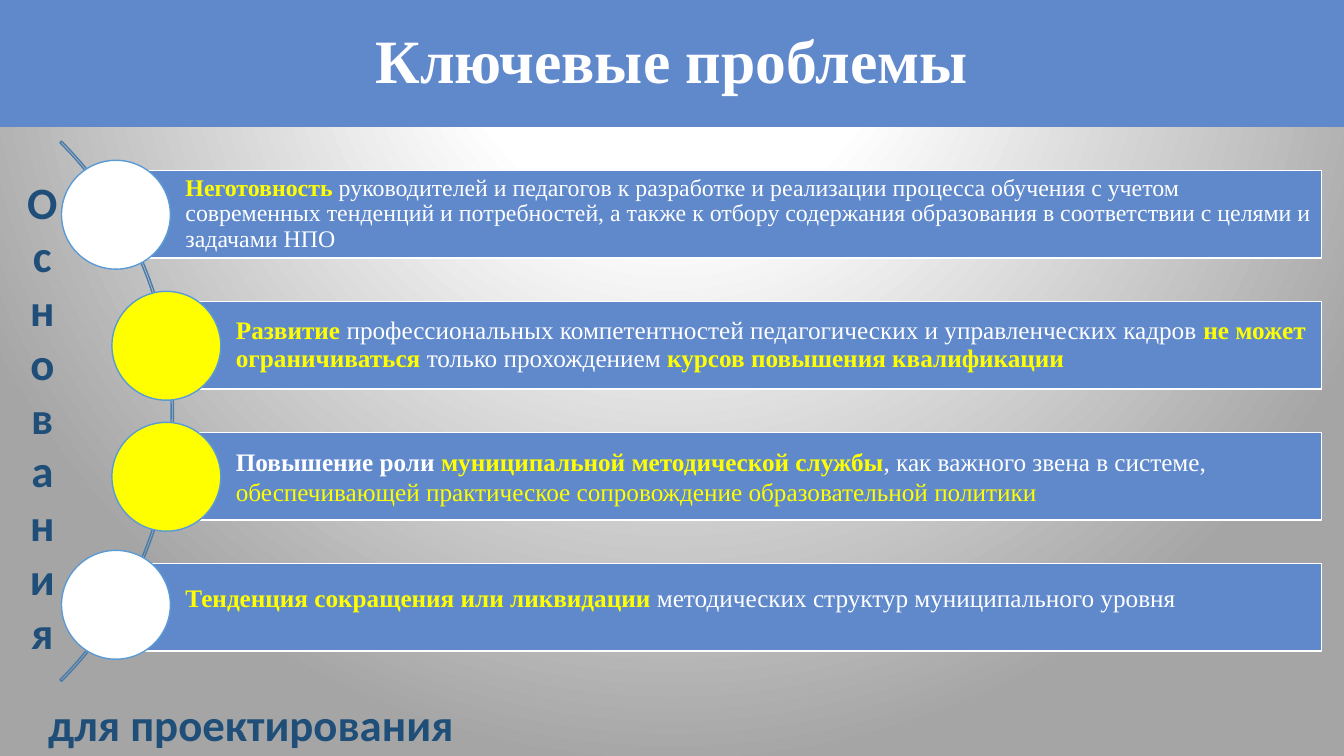
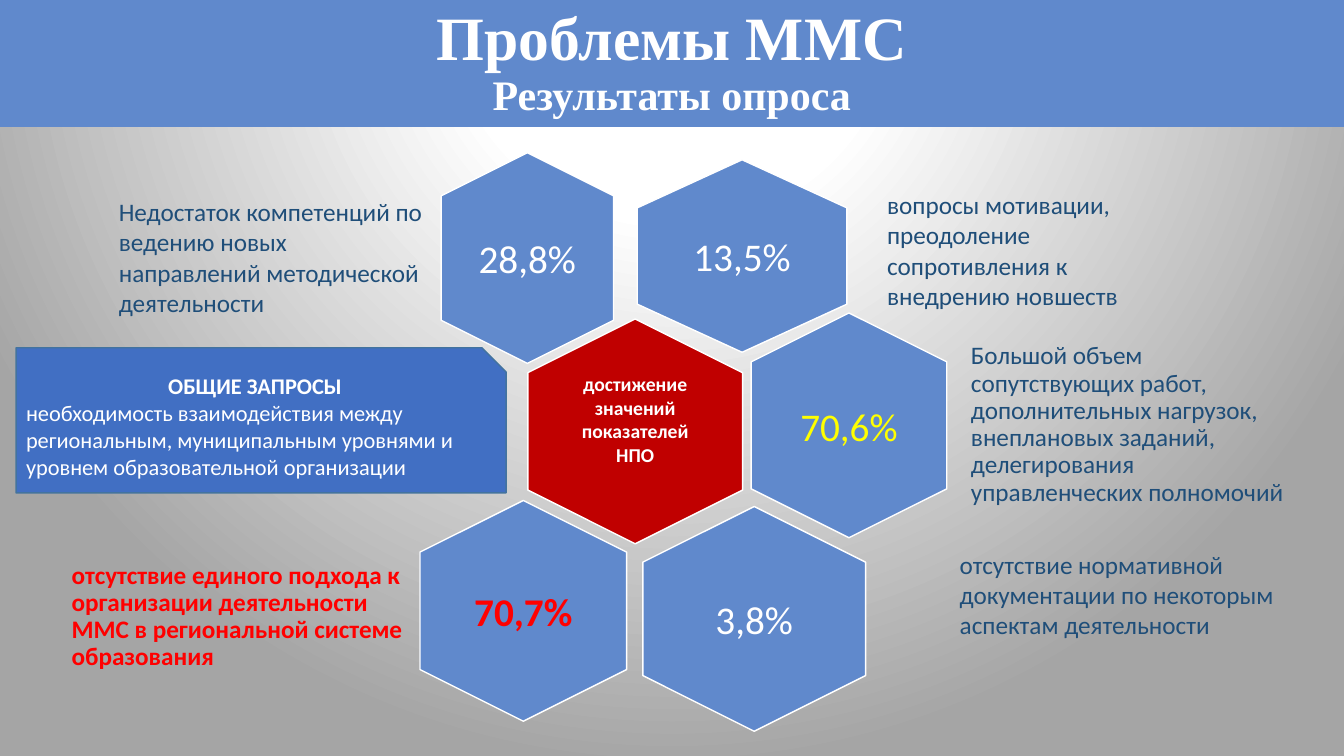
from dataclasses import dataclass
from typing import NamedTuple

from lxml import etree
from pptx import Presentation
from pptx.dml.color import RGBColor
from pptx.enum.shapes import MSO_SHAPE
from pptx.enum.text import MSO_ANCHOR, PP_ALIGN
from pptx.oxml.ns import qn
from pptx.util import Inches, Pt

RECTANGLE, OVAL = MSO_SHAPE.RECTANGLE, MSO_SHAPE.OVAL
HEXAGON, SNIPPED = MSO_SHAPE.HEXAGON, MSO_SHAPE.SNIP_1_RECTANGLE
BLOCK_ARC = MSO_SHAPE.BLOCK_ARC
LEFT, CENTER = PP_ALIGN.LEFT, PP_ALIGN.CENTER
TOP, MIDDLE = MSO_ANCHOR.TOP, MSO_ANCHOR.MIDDLE


@dataclass(frozen=True)
class Theme:
    blue: str = "6089CC"
    deep_blue: str = "416FC3"
    snip_line: str = "43739E"
    arc_line: str = "497CAB"
    circle_line: str = "5B9BD5"
    navy: str = "1F4E79"
    white: str = "FFFFFF"
    yellow: str = "FFFF00"
    red: str = "FF0000"
    dark_red: str = "C00000"
    background: tuple = ((0, "FFFFFF"), (28, "FFFFFF"), (100, "A5A5A5"))
    serif: str = "Times New Roman"
    sans: str = "Calibri"
    title: int = 44
    subtitle: int = 30
    caption: int = 32
    percent: int = 28
    body: int = 18
    small: int = 16
    tight: float = 0.9


THEME = Theme()


class Box(NamedTuple):
    left: float
    top: float
    width: float
    height: float

    def inches(self):
        return [Inches(value) for value in self]


def centered_box(x, y, width, height):
    return Box(x - width / 2, y - height / 2, width, height)


def run(text, **changes):
    """A span of text with its own size, color or bold."""
    return text, changes


def write(shape, paragraphs, font=THEME.sans, size=THEME.body, color=THEME.navy,
          bold=False, align=LEFT, anchor=TOP, spacing=1.0,
          insets=(0.1, 0.05, 0.1, 0.05)):
    """Fill a shape with paragraphs; each is a list of runs."""
    frame = shape.text_frame
    frame.word_wrap = True
    frame.vertical_anchor = anchor
    (frame.margin_left, frame.margin_top,
     frame.margin_right, frame.margin_bottom) = [Inches(value) for value in insets]
    for index, runs in enumerate(paragraphs):
        para = frame.paragraphs[0] if index == 0 else frame.add_paragraph()
        para.alignment = align[index] if isinstance(align, tuple) else align
        para.line_spacing = spacing
        for text, changes in runs:
            span = para.add_run()
            span.text = text
            span.font.name = font
            span.font.size = Pt(changes.get("size", size))
            span.font.bold = changes.get("bold", bold)
            span.font.color.rgb = RGBColor.from_string(changes.get("color", color))


def add_text(page, box, text, **text_format):
    text_box = page.shapes.add_textbox(*box.inches())
    write(text_box, [[run(text)]], **text_format)
    return text_box


def add_shape(page, kind, box, fill=None, line=None):
    shape = page.shapes.add_shape(kind, *box.inches())
    shape.shadow.inherit = False
    if fill:
        shape.fill.solid()
        shape.fill.fore_color.rgb = RGBColor.from_string(fill)
    else:
        shape.fill.background()
    if line:
        shape.line.color.rgb = RGBColor.from_string(line)
        shape.line.width = Pt(1)
    else:
        shape.line.fill.background()
    return shape


def paint_background(page):
    """Radial gradient with its center above the slide."""
    page.background.fill.gradient()
    gradient = page.element.find(".//" + qn("a:gradFill"))
    for child in list(gradient):
        gradient.remove(child)
    stops = etree.SubElement(gradient, qn("a:gsLst"))
    for position, color in THEME.background:
        stop = etree.SubElement(stops, qn("a:gs"), pos=str(position * 1000))
        etree.SubElement(stop, qn("a:srgbClr"), val=color)
    circle = etree.SubElement(gradient, qn("a:path"), {"path": "circle"})
    etree.SubElement(circle, qn("a:fillToRect"),
                     l="50000", t="-80000", r="50000", b="180000")


def add_page(deck, title, subtitle=None):
    """A blank page with the shared background and title band."""
    page = deck.slides.add_slide(deck.slide_layouts[6])
    paint_background(page)
    band = add_shape(page, RECTANGLE, Box(0, 0, 13.33, 1.26), THEME.blue)
    lines = [[run(title)]]
    if subtitle:
        lines.append([run(subtitle, size=THEME.subtitle)])
    write(band, lines, font=THEME.serif, size=THEME.title, color=THEME.white,
          bold=True, align=CENTER, anchor=MIDDLE, spacing=THEME.tight)
    return page


# Slide 1: problem list along an arc

def key(text):
    return run(text, color=THEME.yellow, bold=True)


PROBLEMS = [
    dict(left=1.15, dot=THEME.white, size=17, spacing=THEME.tight, runs=[
        key("Неготовность "),
        run("руководителей и педагогов к разработке и реализации процесса обучения "
            "с учетом современных тенденций и потребностей, а также к отбору "
            "содержания образования в соответствии с целями и задачами НПО")]),
    dict(left=1.65, dot=THEME.yellow, spacing=THEME.tight, runs=[
        key("Развитие "),
        run("профессиональных компетентностей педагогических и управленческих кадров "),
        key("не может ограничиваться "),
        run("только прохождением "),
        key("курсов повышения квалификации")]),
    dict(left=1.65, dot=THEME.yellow, runs=[
        run("Повышение роли ", bold=True),
        key("муниципальной методической службы"),
        run(", как важного звена в системе, "),
        run("обеспечивающей практическое сопровождение образовательной политики",
            color=THEME.yellow)]),
    dict(left=1.15, dot=THEME.white, lift=0.13, bottom=0.24, runs=[
        key("Тенденция сокращения или ликвидации "),
        run("методических структур муниципального уровня")]),
]


def add_problem(page, box, runs, dot, size=THEME.body, spacing=1.0,
                lift=0.1, bottom=0.05):
    """A bar with a circle over its left end."""
    bar = add_shape(page, RECTANGLE, box, THEME.blue, THEME.white)
    write(bar, [runs], font=THEME.serif, size=size, color=THEME.white, anchor=MIDDLE,
          spacing=spacing, insets=(0.69, 0.05, 0.05, bottom))
    circle = Box(box.left - 0.54, box.top - lift, 1.08, 1.08)
    add_shape(page, OVAL, circle, dot, THEME.circle_line)


def add_problem_list(page, box, step=1.3):
    arc = add_shape(page, BLOCK_ARC, Box(box.left - 7.01, box.top - 1.4, 7.58, 7.58),
                    line=THEME.arc_line)
    for index, value in enumerate((189, 27, 0.003)):
        arc.adjustments[index] = value
    right = box.left + box.width
    for index, problem in enumerate(PROBLEMS):
        details = dict(problem)
        left = details.pop("left")
        bar = Box(left, box.top + index * step, right - left, 0.87)
        add_problem(page, bar, **details)


def build_key_problems(deck):
    page = add_page(deck, "Ключевые проблемы")
    add_problem_list(page, Box(1.15, 1.69, 11.96, 4.78))
    # Stacked caption and its continuation
    caption = dict(size=THEME.caption, bold=True)
    stacked = add_text(page, Box(0, 1.01, 0.84, 6.24), "Основания",
                       align=CENTER, **caption)
    stacked.text_frame._txBody.bodyPr.set("vert", "wordArtVert")
    add_text(page, Box(0.38, 6.86, 6.76, 0.64), "для проектирования", **caption)


# Slide 2: survey hexagons with labels

# Center x, center y, width, height, text, changes of format
HEXAGONS = [
    (7.36, 2.54, 2.08, 1.91, "13,5%", {}),
    (5.23, 2.56, 1.71, 2.09, "28,8%", {}),
    (6.3, 4.28, 2.13, 2.23, "достижение значений показателей НПО",
     dict(fill=THEME.dark_red, size=14, bold=True, bottom=0.3)),
    (7.48, 6.14, 2.21, 2.23, "3,8%", {}),
    (8.42, 4.22, 1.94, 2.23, "70,6%", dict(color=THEME.yellow)),
    (5.19, 6.06, 2.05, 2.19, "70,7%", dict(color=THEME.red, bold=True)),
]

MIDDLE_LABEL = dict(anchor=MIDDLE, spacing=THEME.tight, insets=(0.07,) * 4)
LABELS = [
    (Box(0.64, 5.45, 3.56, 1.34),
     "отсутствие единого подхода к организации деятельности ММС "
     "в региональной системе образования",
     dict(color=THEME.red, bold=True, **MIDDLE_LABEL)),
    (Box(9.56, 3.25, 3.35, 1.93),
     "Большой объем сопутствующих работ, дополнительных нагрузок, внеплановых "
     "заданий, делегирования управленческих полномочий", MIDDLE_LABEL),
    (Box(8.7, 1.83, 2.77, 1.31),
     "вопросы мотивации, преодоление сопротивления к внедрению новшеств", {}),
    (Box(9.42, 5.4, 3.71, 1.01),
     "отсутствие нормативной документации по некоторым аспектам деятельности", {}),
    (Box(1.08, 1.9, 3.29, 1.31),
     "Недостаток компетенций по ведению новых направлений методической "
     "деятельности", {}),
]


def add_hexagon(page, box, text, fill=THEME.blue, size=THEME.percent,
                color=THEME.white, bold=False, bottom=0.06):
    """A hexagon standing on its point, with level text in its middle."""
    x, y = box.left + box.width / 2, box.top + box.height / 2
    turned = centered_box(x, y, box.height, box.width)
    add_shape(page, HEXAGON, turned, fill, THEME.white).rotation = 90
    inner = centered_box(x, y, box.width * 0.68, box.height * 0.67)
    add_text(page, inner, text, size=size, color=color, bold=bold, align=CENTER,
             anchor=MIDDLE, insets=(0.06, 0.06, 0.06, bottom))


def add_requests(page, box):
    card = add_shape(page, SNIPPED, box, THEME.deep_blue, THEME.snip_line)
    write(card, [[run("ОБЩИЕ ЗАПРОСЫ", bold=True)],
                 [run("необходимость взаимодействия между региональным, муниципальным "
                      "уровнями и уровнем образовательной организации")]],
          size=THEME.small, color=THEME.white, align=(CENTER, LEFT), anchor=MIDDLE)


def build_survey(deck):
    page = add_page(deck, "Проблемы ММС", "Результаты опроса")
    for x, y, width, height, text, changes in HEXAGONS:
        add_hexagon(page, centered_box(x, y, width, height), text, **changes)
    add_requests(page, Box(0.16, 3.45, 4.86, 1.44))
    for box, text, changes in LABELS:
        add_text(page, box, text, **changes)


def main():
    deck = Presentation()
    deck.slide_width, deck.slide_height = Inches(13.33), Inches(7.5)
    build_key_problems(deck)
    build_survey(deck)
    deck.save("out.pptx")


if __name__ == "__main__":
    main()
